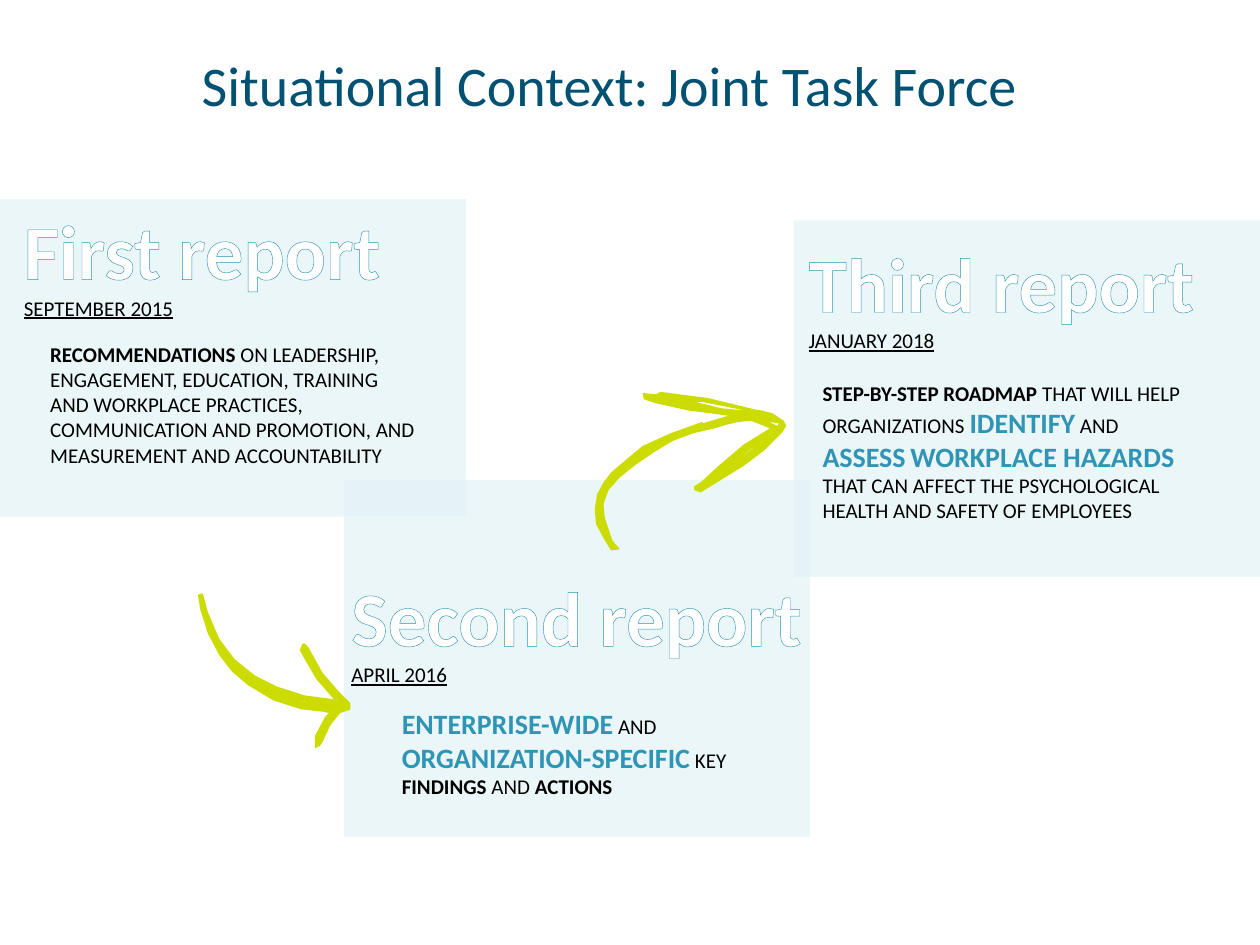
from dataclasses import dataclass

from lxml import etree
from pptx import Presentation
from pptx.dml.color import RGBColor
from pptx.enum.shapes import MSO_SHAPE
from pptx.enum.text import MSO_ANCHOR, MSO_AUTO_SIZE, PP_ALIGN
from pptx.oxml.ns import qn
from pptx.util import Inches, Pt

RECT = MSO_SHAPE.RECTANGLE
TOP = MSO_ANCHOR.TOP
LEFT = PP_ALIGN.LEFT
NO_AUTOFIT = MSO_AUTO_SIZE.NONE
TITLE_ONLY = 5
UNITS_PER_INCH = 100  # freeform points are whole units


@dataclass(frozen=True)
class Theme:
    font: str = "Calibri"
    title: str = "005172"
    panel: str = "E4F3F8"
    panel_alpha: int = 73
    accent: str = "3095B4"
    text: str = "000000"
    heading: str = "FFFFFF"
    arrow: str = "CCDC00"
    title_size: int = 32
    heading_size: int = 44
    key_size: int = 16
    body_size: int = 12
    outline: float = 0.52


THEME = Theme()

# Run styles: size, colour, bold
PLAIN = (THEME.body_size, THEME.text, False)
BOLD = (THEME.body_size, THEME.text, True)
KEY = (THEME.key_size, THEME.accent, True)

# Each report: panel box, heading box and body box (both offset from the
# panel's corner), heading, date, body runs
REPORTS = [
    ((0, 1.58, 3.7, 2.52), (0.09, -0.02, 4.22, 1.04), (0.3, 1.08, 3.11, 1.11),
     "First report", "SEPTEMBER 2015",
     [("RECOMMENDATIONS", BOLD),
      (" ON LEADERSHIP, ENGAGEMENT, EDUCATION, TRAINING AND WORKPLACE "
       "PRACTICES, COMMUNICATION AND PROMOTION, AND MEASUREMENT AND "
       "ACCOUNTABILITY", PLAIN)]),
    ((2.73, 3.81, 3.7, 2.83), (-0.04, 0.66, 3.89, 1.04), (0.36, 1.75, 3.11, 0.84),
     "Second report", "APRIL 2016",
     [("ENTERPRISE-WIDE", KEY), (" AND ", PLAIN),
      ("ORGANIZATION-SPECIFIC", KEY), (" KEY ", PLAIN),
      ("FINDINGS", BOLD), (" AND ", PLAIN), ("ACTIONS", BOLD)]),
    ((6.3, 1.75, 3.7, 2.83), (0.02, 0.07, 3.67, 1.04), (0.13, 1.22, 3.11, 1.25),
     "Third report", "JANUARY 2018",
     [("STEP-BY-STEP ROADMAP ", BOLD), ("THAT WILL HELP ORGANIZATIONS ", PLAIN),
      ("IDENTIFY", KEY), (" AND ", PLAIN), ("ASSESS", KEY), (" ", PLAIN),
      ("WORKPLACE HAZARDS ", KEY),
      ("THAT CAN AFFECT THE PSYCHOLOGICAL HEALTH AND SAFETY OF EMPLOYEES", PLAIN)]),
]

# Hand-drawn arrows: an outline followed by the gaps between its strokes
ARROW_TO_SECOND = [
    [(2.78, 5.58), (2.74, 5.54), (2.69, 5.49), (2.56, 5.34), (2.46, 5.16),
     (2.45, 5.14), (2.42, 5.11), (2.4, 5.11), (2.38, 5.16), (2.4, 5.2),
     (2.51, 5.39), (2.65, 5.55), (2.42, 5.52), (2.2, 5.45), (2.02, 5.36),
     (1.86, 5.23), (1.74, 5.07), (1.65, 4.86), (1.61, 4.71), (1.57, 4.72),
     (1.59, 4.84), (1.65, 5.03), (1.74, 5.2), (1.84, 5.33), (1.97, 5.44),
     (2.17, 5.56), (2.39, 5.63), (2.57, 5.65), (2.61, 5.66), (2.58, 5.69),
     (2.5, 5.84), (2.5, 5.94), (2.54, 5.92), (2.56, 5.89), (2.62, 5.76),
     (2.7, 5.66), (2.76, 5.64), (2.78, 5.63)],
    [(2.2, 5.51), (2.36, 5.56), (2.54, 5.59), (2.4, 5.57)],
]
ARROW_TO_THIRD = [
    [(5.67, 3.4), (5.5, 3.44), (5.34, 3.5), (5.19, 3.59), (5.03, 3.7),
     (4.92, 3.79), (4.83, 3.89), (4.79, 4), (4.8, 4.11), (4.86, 4.29),
     (4.92, 4.36), (4.85, 4.37), (4.8, 4.29), (4.73, 4.16), (4.72, 4.04),
     (4.74, 3.92), (4.79, 3.83), (4.85, 3.75), (4.92, 3.69), (4.98, 3.64),
     (5.1, 3.54), (5.32, 3.44), (5.57, 3.35), (5.58, 3.36), (5.78, 3.3),
     (5.63, 3.28), (5.47, 3.26), (5.2, 3.2), (5.11, 3.17), (5.1, 3.12),
     (5.21, 3.13), (5.24, 3.11), (5.62, 3.16), (5.99, 3.25), (6.05, 3.26),
     (6.13, 3.28), (6.22, 3.34), (6.24, 3.38), (6.21, 3.43), (6.06, 3.58),
     (5.9, 3.7), (5.56, 3.91), (5.51, 3.89), (5.51, 3.86), (5.56, 3.83),
     (5.69, 3.71), (5.9, 3.53), (6.11, 3.4), (5.96, 3.34), (5.86, 3.35),
     (5.77, 3.37)],
    [(5.92, 3.26), (5.57, 3.19), (5.52, 3.19), (5.72, 3.24)],
    [(5.85, 3.66), (5.96, 3.57), (6.04, 3.5), (5.94, 3.58)],
    [(6.17, 3.38), (6.18, 3.36), (6.1, 3.35)],
]


def style(font, size, color, bold=False):
    font.name, font.size, font.bold = THEME.font, Pt(size), bold
    font.color.rgb = RGBColor.from_string(color)


def paint(sp, color):
    sp.shadow.inherit = False
    sp.fill.solid()
    sp.fill.fore_color.rgb = RGBColor.from_string(color)
    sp.line.fill.background()


def outline_text(r):
    """Draw a thin accent line around the letters of a run."""
    ln = etree.Element(qn("a:ln"), w=str(Pt(THEME.outline)))
    fill = etree.SubElement(ln, qn("a:solidFill"))
    etree.SubElement(fill, qn("a:srgbClr"), val=THEME.accent)
    r.font._element.insert(0, ln)


def add_text_frame(s, panel, offset):
    dx, dy, width, height = offset
    box = (panel[0] + dx, panel[1] + dy, width, height)
    tf = s.shapes.add_textbox(*map(Inches, box)).text_frame
    tf.word_wrap = True
    return tf


def add_title(s, box, text):
    sp = s.shapes.title
    sp.left, sp.top, sp.width, sp.height = map(Inches, box)
    tf = sp.text_frame
    tf.text = text
    tf.auto_size, tf.vertical_anchor = NO_AUTOFIT, TOP
    p = tf.paragraphs[0]
    p.alignment = LEFT
    style(p.font, THEME.title_size, THEME.title)


def add_report(s, panel, heading_box, body_box, heading, date, body):
    sp = s.shapes.add_shape(RECT, *map(Inches, panel))
    paint(sp, THEME.panel)
    color = sp._element.spPr.find(".//" + qn("a:srgbClr"))
    etree.SubElement(color, qn("a:alpha"), val=str(THEME.panel_alpha * 1000))

    p = add_text_frame(s, panel, body_box).paragraphs[0]
    for text, look in body:
        r = p.add_run()
        r.text = text
        style(r.font, *look)

    tf = add_text_frame(s, panel, heading_box)
    r = tf.paragraphs[0].add_run()
    r.text = heading
    style(r.font, THEME.heading_size, THEME.heading, True)
    outline_text(r)
    p = tf.add_paragraph()
    p.text = date
    style(p.font, THEME.body_size, THEME.text)
    p.font.underline = True


def add_arrow(s, contours):
    outline, *gaps = [[(round(x * UNITS_PER_INCH), round(y * UNITS_PER_INCH))
                       for x, y in contour] for contour in contours]
    builder = s.shapes.build_freeform(*outline[0], scale=Inches(1) / UNITS_PER_INCH)
    builder.add_line_segments(outline[1:])
    for gap in gaps:
        builder.move_to(*gap[0])
        builder.add_line_segments(gap[1:])
    paint(builder.convert_to_shape(), THEME.arrow)


def main():
    prs = Presentation()
    prs.slide_width, prs.slide_height = Inches(10), Inches(7.5)
    s = prs.slides.add_slide(prs.slide_layouts[TITLE_ONLY])
    add_title(s, (1.5, 0.35, 7.6, 0.96), "Situational Context: Joint Task Force")
    for report in REPORTS:
        add_report(s, *report)
    for arrow in (ARROW_TO_SECOND, ARROW_TO_THIRD):
        add_arrow(s, arrow)
    prs.save("out.pptx")


if __name__ == "__main__":
    main()
